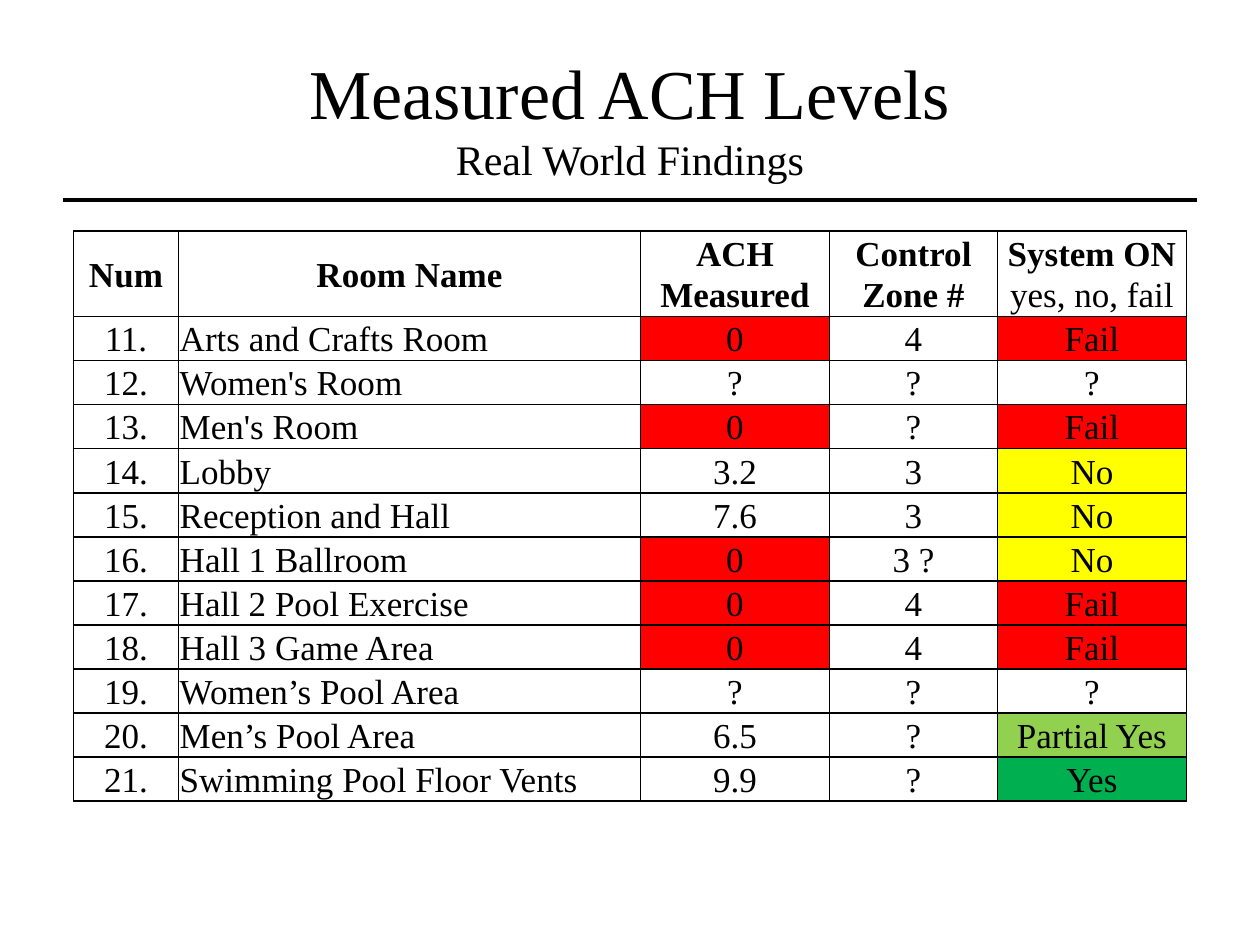
from lxml.etree import SubElement
from pptx import Presentation
from pptx.dml.color import RGBColor
from pptx.enum.shapes import MSO_CONNECTOR as Connector
from pptx.enum.text import MSO_ANCHOR as Anchor, MSO_AUTO_SIZE as AutoSize, PP_ALIGN as Align
from pptx.oxml.ns import qn
from pptx.util import Pt

FONT = "Times New Roman"
BLACK = "000000"
RED, YELLOW, LIME, GREEN = "FF0000", "FFFF00", "92D050", "00B050"
STATUS_FILLS = {"Fail": RED, "No": YELLOW, "Partial Yes": LIME, "Yes": GREEN}
COLUMN_WIDTHS = [60, 264, 108, 96, 108]
HEADER_HEIGHT, ROW_HEIGHT = 48.5, 25
HEADERS = [["Num"], ["Room Name"], ["ACH", "Measured"], ["Control\nZone #"],
           ["System ON", "yes, no, fail"]]
ROOMS = [
    ("11.", "Arts and Crafts Room", "0", "4", "Fail"),
    ("12.", "Women's Room", "?", "?", "?"),
    ("13.", "Men's Room", "0", "?", "Fail"),
    ("14.", "Lobby", "3.2", "3", "No"),
    ("15.", "Reception and Hall", "7.6", "3", "No"),
    ("16.", "Hall 1 Ballroom", "0", "3 ?", "No"),
    ("17.", "Hall 2 Pool Exercise", "0", "4", "Fail"),
    ("18.", "Hall 3 Game Area", "0", "4", "Fail"),
    ("19.", "Women’s Pool Area", "?", "?", "?"),
    ("20.", "Men’s Pool Area", "6.5", "?", "Partial Yes"),
    ("21.", "Swimming Pool Floor Vents", "9.9", "?", "Yes"),
]


def color(value):
    return RGBColor.from_string(value)


def write(paragraph, text, size=20, bold=False, align=Align.CENTER, spacing=None):
    paragraph.alignment = align
    paragraph.line_spacing = spacing
    for index, line in enumerate(text.split("\n")):
        if index:
            paragraph.add_line_break()
            SubElement(paragraph._p[-1], qn("a:rPr"), sz=str(size * 100))
        if line:
            run = paragraph.add_run()
            run.text = line
            run.font.name = FONT
            run.font.size = Pt(size)
            run.font.bold = bold
            run.font.color.rgb = color(BLACK)


def add_title(slide):
    title = slide.shapes.title
    title.left, title.top, title.width, title.height = Pt(36), Pt(21.6), Pt(648), Pt(90)
    frame = title.text_frame
    frame.auto_size = AutoSize.NONE
    frame.vertical_anchor = Anchor.MIDDLE
    write(frame.paragraphs[0], "Measured ACH Levels\n", size=40)
    write(frame.paragraphs[0], "Real World Findings", size=24)


def add_rule(slide, left, right, top):
    rule = slide.shapes.add_connector(Connector.STRAIGHT, Pt(left), Pt(top), Pt(right), Pt(top))
    rule.line.color.rgb = color(BLACK)
    rule.line.width = Pt(2)
    SubElement(rule._element.spPr, qn("a:effectLst"))


def set_borders(cell):
    properties = cell._tc.get_or_add_tcPr()
    for position, side in enumerate(("a:lnL", "a:lnR", "a:lnT", "a:lnB")):
        border = SubElement(properties, qn(side), w=str(Pt(1)))
        fill = SubElement(border, qn("a:solidFill"))
        SubElement(fill, qn("a:srgbClr"), val=BLACK)
        properties.insert(position, border)


def fill_cell(cell, lines, fill=None, bold_lines=0, align=Align.CENTER):
    cell.vertical_anchor = Anchor.MIDDLE
    cell.margin_left = cell.margin_right = cell.margin_top = cell.margin_bottom = Pt(0.72)
    frame = cell.text_frame
    for index, line in enumerate(lines):
        paragraph = frame.add_paragraph() if index else frame.paragraphs[0]
        write(paragraph, line, bold=index < bold_lines, align=align, spacing=1.07)
    if fill:
        cell.fill.solid()
        cell.fill.fore_color.rgb = color(fill)
    else:
        cell.fill.background()
    set_borders(cell)


def room_fill(column, text):
    if column == 2 and text == "0":
        return RED
    return STATUS_FILLS.get(text) if column == 4 else None


def add_room_table(slide, left, top):
    height = HEADER_HEIGHT + ROW_HEIGHT * len(ROOMS)
    table = slide.shapes.add_table(len(ROOMS) + 1, len(HEADERS), Pt(left), Pt(top),
                                   Pt(sum(COLUMN_WIDTHS)), Pt(height)).table
    table.first_row = table.horz_banding = False
    for column, width in zip(table.columns, COLUMN_WIDTHS):
        column.width = Pt(width)
    for index, row in enumerate(table.rows):
        row.height = Pt(ROW_HEIGHT if index else HEADER_HEIGHT)
    for column, lines in enumerate(HEADERS):
        fill_cell(table.cell(0, column), lines, bold_lines=1 if column == 4 else len(lines))
    for row, room in enumerate(ROOMS, start=1):
        for column, text in enumerate(room):
            fill_cell(table.cell(row, column), [text], fill=room_fill(column, text),
                      align=Align.LEFT if column == 1 else Align.CENTER)


def main():
    presentation = Presentation()
    presentation.slide_width, presentation.slide_height = Pt(720), Pt(540)
    slide = presentation.slides.add_slide(presentation.slide_layouts[5])
    add_rule(slide, left=36, right=684, top=114.25)
    add_title(slide)
    add_room_table(slide, left=42, top=132)
    presentation.save("out.pptx")


if __name__ == "__main__":
    main()
